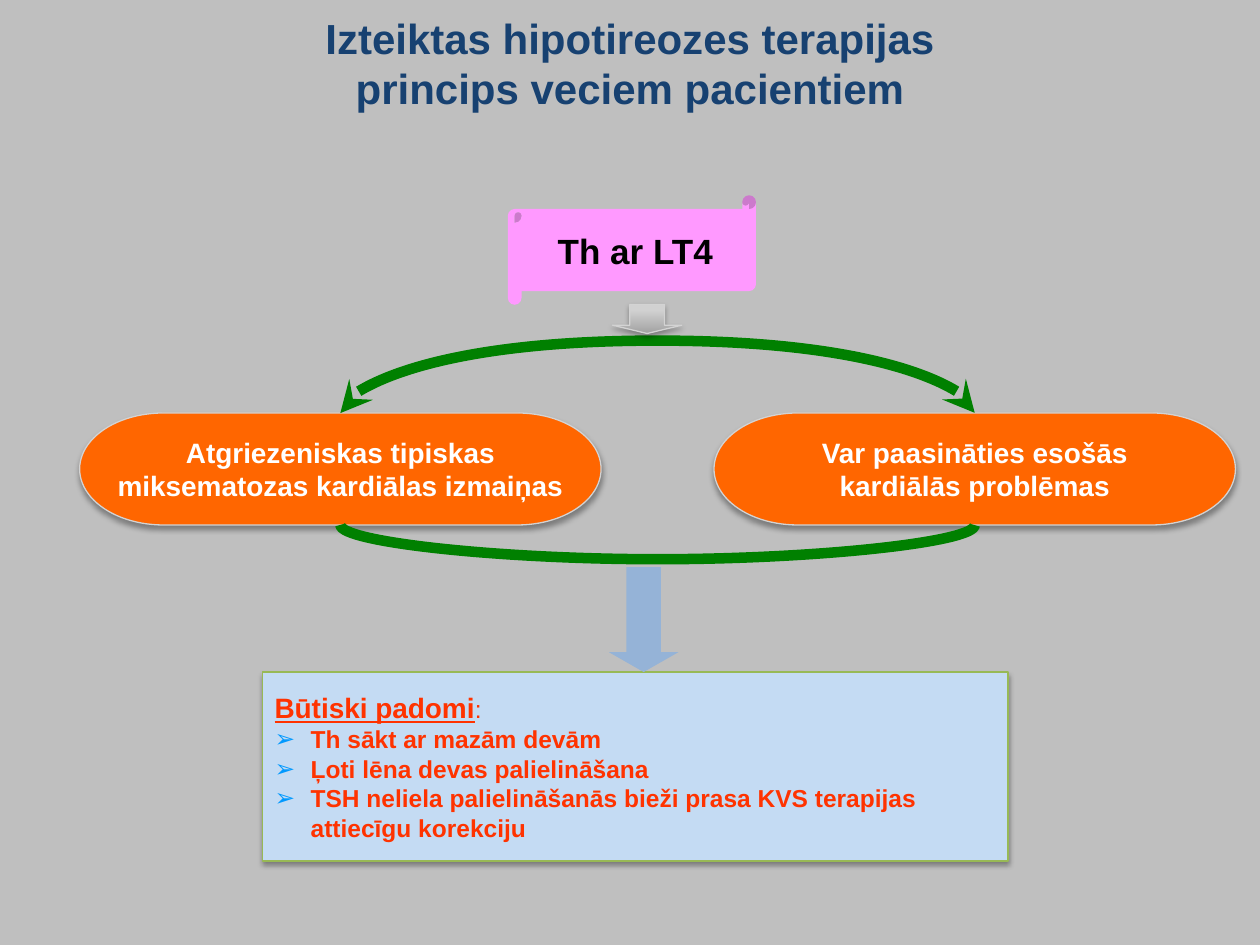
from dataclasses import dataclass
from lxml.etree import SubElement as Sub
from pptx import Presentation
from pptx.dml.color import RGBColor as RGB
from pptx.enum.shapes import MSO_CONNECTOR as Link, MSO_SHAPE as Kind
from pptx.enum.text import MSO_ANCHOR as Anchor, PP_ALIGN as Align
from pptx.oxml.ns import qn
from pptx.util import Pt


@dataclass(frozen=True)
class Theme:
    font: str = "Arial"
    back: str = "BFBFBF"
    title: str = "174171"
    pink: str = "FF99FF"
    orange: str = "FF6600"
    green: str = "008000"
    blue: str = "95B3D7"
    pale: str = "C4DBF3"
    olive: str = "98B955"
    edge: str = "D3D3D3"
    grey: tuple = ((0, "A1A1A1"), (0.8, "D1D1D1"))
    red: str = "FF3300"
    mark: str = "0099FF"
    black: str = "000000"
    white: str = "FFFFFF"
    huge: int = 24
    large: int = 20
    mid: int = 16
    small: int = 14


def rgb(code):
    return RGB.from_string(code)


class Deck:
    def __init__(self, theme):
        self.theme = theme
        self.show = Presentation()
        self.show.slide_width, self.show.slide_height = Pt(720), Pt(540)
        self.slide = self.show.slides.add_slide(self.show.slide_layouts[6])
        fill = self.slide.background.fill
        fill.solid()
        fill.fore_color.rgb = rgb(theme.back)

    def run(self, para, text, size, color, bold=True, under=False):
        """Add a run; a newline in the text becomes a line break."""
        for i, part in enumerate(text.split("\n")):
            if i:
                para.add_line_break()
            run = para.add_run()
            run.text = part
            font = run.font
            font.name, font.size = self.theme.font, Pt(size)
            font.bold, font.underline = bold, under
            font.color.rgb = rgb(color)

    def lines(self, shape, texts, size, color):
        """Write one centred paragraph per text."""
        frame = shape.text_frame
        for i, text in enumerate(texts):
            para = frame.add_paragraph() if i else frame.paragraphs[0]
            para.alignment = Align.CENTER
            self.run(para, text, size, color)

    def title(self, text, box):
        shape = self.slide.shapes.add_textbox(*map(Pt, box))
        shape.text_frame.word_wrap = True
        self.lines(shape, [text], self.theme.huge, self.theme.title)

    def shape(self, kind, box, fill, edge=None):
        """Add a filled shape; one with an edge also casts a shadow."""
        shape = self.slide.shapes.add_shape(kind, *map(Pt, box))
        if isinstance(fill, tuple):
            shape.fill.gradient()
            shape.fill.gradient_angle = 90
            for stop, (spot, color) in zip(shape.fill.gradient_stops, fill):
                stop.position, stop.color.rgb = spot, rgb(color)
        else:
            shape.fill.solid()
            shape.fill.fore_color.rgb = rgb(fill)
        if edge:
            shape.line.color.rgb, shape.line.width = rgb(edge), Pt(0.75)
        else:
            shape.line.fill.background()
        shape.shadow.inherit = False
        if edge:
            self.shade(shape)
        frame = shape.text_frame
        frame.word_wrap, frame.vertical_anchor = False, Anchor.MIDDLE
        return shape

    def shade(self, shape):
        effects = shape.element.spPr.find(qn("a:effectLst"))
        outer = Sub(effects, qn("a:outerShdw"), blurRad=str(Pt(3.1)),
                    dist=str(Pt(1.8)), dir="5400000", rotWithShape="0")
        color = Sub(outer, qn("a:srgbClr"), val=self.theme.black)
        Sub(color, qn("a:alpha"), val="35000")

    def arrow(self, box, fill, edge=None):
        shape = self.shape(Kind.DOWN_ARROW, box, fill, edge)
        shape.adjustments[1] = 0.285

    def bow(self, left, right, y, bulge, up=False):
        """Curve between two points at one height; upward ones get arrowheads."""
        thin, half = 0.13, (right - left) / 2
        x = (left + right) / 2
        ends = (y + half, y - half) if up else (y - half, y + half)
        line = self.slide.shapes.add_connector(
            Link.CURVE, Pt(x + thin / 2), Pt(ends[0]), Pt(x - thin / 2), Pt(ends[1]))
        line.line.color.rgb, line.line.width = rgb(self.theme.green), Pt(6)
        props = line.element.spPr
        props.find(qn("a:xfrm")).set("rot", str((90 if up else 270) * 60000))
        guides = props.find(qn("a:prstGeom")).get_or_add_avLst()
        Sub(guides, qn("a:gd"), name="adj1", fmla=f"val {round(bulge / thin * 100000)}")
        if up:
            stroke = line.line._get_or_add_ln()
            for end in ("a:headEnd", "a:tailEnd"):
                Sub(stroke, qn(end), type="stealth")
        Sub(props, qn("a:effectLst"))

    def tips(self, box, head, items):
        """Panel with an underlined heading and arrow bullets."""
        theme = self.theme
        frame = self.shape(Kind.RECTANGLE, box, theme.pale, theme.olive).text_frame
        frame.word_wrap = True
        para = frame.paragraphs[0]
        para.alignment = Align.LEFT
        self.run(para, head, theme.mid, theme.red, under=True)
        self.run(para, ":", theme.small, theme.red, bold=False)
        for item in items:
            para = frame.add_paragraph()
            para.alignment = Align.LEFT
            props = para._p.get_or_add_pPr()
            props.set("marL", str(Pt(20.6)))
            props.set("indent", str(-Pt(20.6)))
            Sub(Sub(props, qn("a:buClr")), qn("a:srgbClr"), val=theme.mark)
            Sub(props, qn("a:buFont"), typeface=theme.font)
            Sub(props, qn("a:buChar"), char="➢")
            self.run(para, item, theme.small, theme.red)


def main():
    theme = Theme()
    deck = Deck(theme)
    deck.tips((149.8, 384, 426.2, 108), "Būtiski padomi", [
        "Th sākt ar mazām devām",
        "Ļoti lēna devas palielināšana",
        "TSH neliela palielināšanās bieži prasa KVS terapijas\nattiecīgu korekciju",
    ])
    deck.arrow((348, 324, 39.6, 60), theme.blue)
    deck.title("Izteiktas hipotireozes terapijas\nprincips veciem pacientiem",
               (36, 3.6, 648, 79.2))

    scroll = deck.shape(Kind.HORIZONTAL_SCROLL, (290.2, 111.6, 141.8, 62.6), theme.pink)
    deck.lines(scroll, ["Th ar LT4"], theme.large, theme.black)

    top, wide, high = 236, 298, 64
    pills = {
        45.5: ["Atgriezeniskas tipiskas", "miksematozas kardiālas izmaiņas"],
        408: ["Var paasināties esošās", "kardiālās problēmas"],
    }
    for left, texts in pills.items():
        pill = deck.shape(Kind.FLOWCHART_TERMINATOR, (left, top, wide, high),
                          theme.orange, theme.edge)
        deck.lines(pill, texts, theme.mid, theme.white)

    mids = [left + wide / 2 for left in pills]
    deck.bow(*mids, top, 38, up=True)
    deck.arrow((350, 174, 39.6, 16.6), theme.grey, theme.edge)
    deck.bow(*mids, top + high, 18)
    deck.show.save("out.pptx")


if __name__ == "__main__":
    main()
